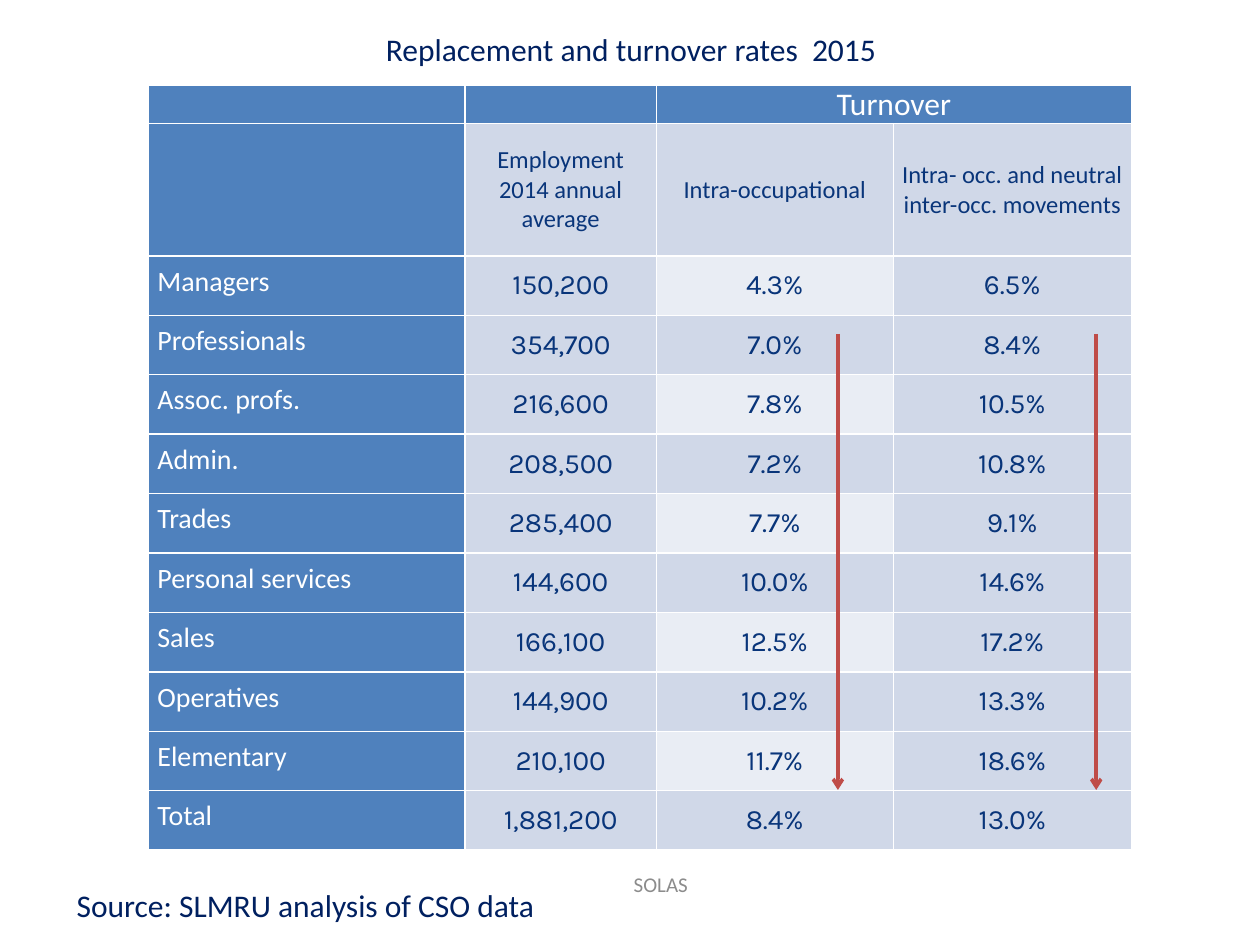
from dataclasses import dataclass

from lxml import etree
from pptx import Presentation
from pptx import util as u
from pptx.dml.color import RGBColor
from pptx.enum import shapes, text
from pptx.oxml import ns

COLS, ROWS = 100, 75  # slide grid; every box is given in its columns and rows


@dataclass(frozen=True)
class Theme:
    font: str = "Calibri"
    figure_font: str = "Karla"
    navy: str = "002060"
    ink: str = "09357A"
    white: str = "FFFFFF"
    grey: str = "8C8C8C"
    blue: str = "4F81BD"
    band: str = "D0D8E8"
    pale: str = "E9EDF4"
    red: str = "BF4C48"
    heading: int = 18
    body: int = 16
    column_head: int = 14
    footer: int = 12


T = Theme()
CENTER = text.PP_ALIGN.CENTER
LEFT = text.PP_ALIGN.LEFT
MIDDLE = text.MSO_ANCHOR.MIDDLE

COLUMN_HEADS = (
    "Employment 2014 annual average",
    "Intra-occupational",
    "Intra- occ. and neutral inter-occ. movements",
)
OCCUPATIONS = (
    ("Managers", "150,200", "4.3%", "6.5%"),
    ("Professionals", "354,700", "7.0%", "8.4%"),
    ("Assoc. profs.", "216,600", "7.8%", "10.5%"),
    ("Admin.", "208,500", "7.2%", "10.8%"),
    ("Trades", "285,400", "7.7%", "9.1%"),
    ("Personal services", "144,600", "10.0%", "14.6%"),
    ("Sales", "166,100", "12.5%", "17.2%"),
    ("Operatives", "144,900", "10.2%", "13.3%"),
    ("Elementary", "210,100", "11.7%", "18.6%"),
    ("Total", "1,881,200", "8.4%", "13.0%"),
)
COLUMN_WIDTHS = (25.1, 15.2, 18.8, 18.9)
ROW_HEIGHTS = (2.9, 10.5) + (4.72,) * len(OCCUPATIONS)


def grid(prs, *lengths):
    """Turn alternating column and row counts into slide lengths."""
    units = (prs.slide_width / COLS, prs.slide_height / ROWS)
    return [u.Emu(round(n * units[i % 2])) for i, n in enumerate(lengths)]


def write(tf, words, size, color, font=T.font, align=CENTER, spacing=None):
    p = tf.paragraphs[0]
    for name, value in {"alignment": align, "line_spacing": spacing}.items():
        setattr(p, name, value)
    target = p.add_run() if words else p
    if words:
        target.text = words
    for name, value in {"size": u.Pt(size), "name": font}.items():
        setattr(target.font, name, value)
    target.font.color.rgb = RGBColor.from_string(color)


def add_label(prs, s, box, words, size, color, **style):
    sp = s.shapes.add_textbox(*grid(prs, *box))
    tf = sp.text_frame
    tf.word_wrap = True
    tf.vertical_anchor = MIDDLE
    write(tf, words, size, color, **style)


def add_borders(cell):
    tc_pr = cell._tc.get_or_add_tcPr()
    for i, side in enumerate(("lnL", "lnR", "lnT", "lnB")):
        ln = etree.Element(ns.qn(f"a:{side}"), w=str(u.Pt(1)))
        fill = etree.SubElement(ln, ns.qn("a:solidFill"))
        etree.SubElement(fill, ns.qn("a:srgbClr"), val=T.white)
        tc_pr.insert(i, ln)


def fill_cell(cell, words, fill, size, color, **style):
    margins = {"margin_left": 0.07, "margin_right": 0.07, "margin_top": 0, "margin_bottom": 0}
    for name, value in margins.items():
        setattr(cell, name, u.Inches(value))
    cell.vertical_anchor = MIDDLE
    cell.fill.solid()
    cell.fill.fore_color.rgb = RGBColor.from_string(fill)
    add_borders(cell)
    write(cell.text_frame, words, size, color, **style)


def add_rates_table(prs, s, box):
    table = s.shapes.add_table(
        len(ROW_HEIGHTS), len(COLUMN_WIDTHS), *grid(prs, *box)
    ).table
    for column, width in zip(table.columns, COLUMN_WIDTHS):
        column.width = grid(prs, width)[0]
    for row, height in zip(table.rows, ROW_HEIGHTS):
        row.height = grid(prs, 0, height)[1]

    for c, words in enumerate(("", "", "Turnover", "")):
        fill_cell(table.cell(0, c), words, T.blue, T.heading, T.white)
    table.cell(0, 2).merge(table.cell(0, 3))

    fill_cell(table.cell(1, 0), "", T.blue, T.column_head, T.white)
    for c, words in enumerate(COLUMN_HEADS, 1):
        fill_cell(table.cell(1, c), words, T.band, T.column_head, T.ink)

    for r, (name, *figures) in enumerate(OCCUPATIONS, 2):
        fill_cell(table.cell(r, 0), name, T.blue, T.body, T.white,
                  align=LEFT, spacing=u.Pt(15))
        for c, figure in enumerate(figures, 1):
            striped = c == 2 and r % 2 == 0 
            fill_cell(table.cell(r, c), figure, T.pale if striped else T.band,
                      T.body, T.ink, font=T.figure_font)


def add_trend_arrow(prs, s, column, top, bottom):
    line = s.shapes.add_connector(
        shapes.MSO_CONNECTOR.STRAIGHT, *grid(prs, column, top, column, bottom)
    )
    line.line.width = u.Pt(2)
    line.line.color.rgb = RGBColor.from_string(T.red)
    etree.SubElement(line.line._get_or_add_ln(), ns.qn("a:tailEnd"), type="arrow")
    etree.SubElement(line._element.spPr, ns.qn("a:effectLst"))


def build_rates_slide(prs):
    s = prs.slides.add_slide(prs.slide_layouts[6])
    add_label(prs, s, (36.6, 68.2, 31.7, 4), "SOLAS", T.footer, T.grey)
    add_rates_table(prs, s, (11.8, 6.8, sum(COLUMN_WIDTHS), sum(ROW_HEIGHTS)))
    for column in (87, 66.5):
        add_trend_arrow(prs, s, column, 26.5, 62.7)
    add_label(prs, s, (5.1, 69.8, 45.7, 4), "Source: SLMRU analysis of CSO data",
              T.heading, T.navy, align=LEFT)
    add_label(prs, s, (5.1, 1.7, 90, 4.3), "Replacement and turnover rates  2015",
              T.heading, T.navy)


def main():
    prs = Presentation()
    prs.slide_width, prs.slide_height = u.Inches(10), u.Inches(7.5)
    build_rates_slide(prs)
    prs.save("out.pptx")


if __name__ == "__main__":
    main()
